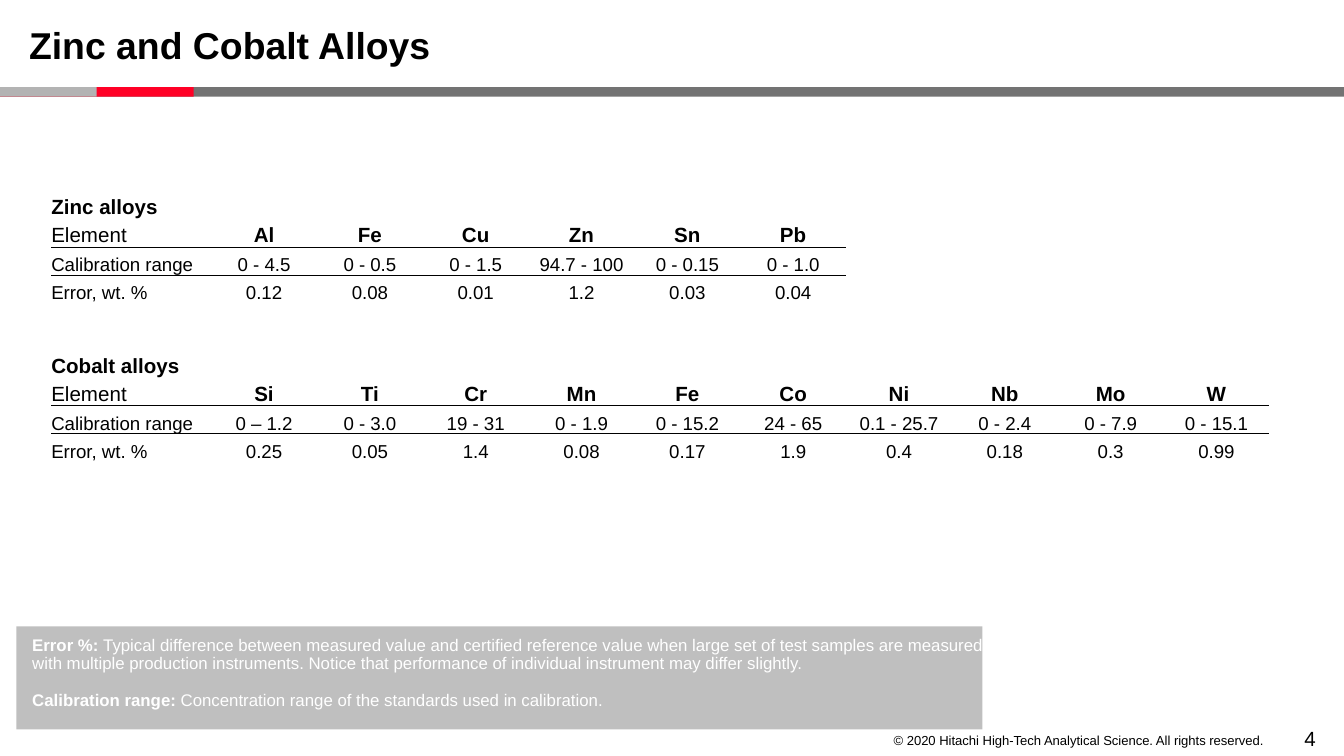
from lxml.etree import SubElement
from pptx import Presentation
from pptx.dml.color import RGBColor
from pptx.enum.shapes import MSO_SHAPE
from pptx.enum.text import MSO_ANCHOR, PP_ALIGN
from pptx.oxml.ns import qn
from pptx.util import Cm, Pt

COLORS = {"black": "000000", "white": "FFFFFF", "dark": "737373",
          "red": "FF0026", "light": "B3B3B3", "panel": "BFBFBF"}

TABLES = [
    (3.61, "Zinc alloys", [
        ("Element", "Al", "Fe", "Cu", "Zn", "Sn", "Pb"),
        ("Calibration range", "0 - 4.5", "0 - 0.5", "0 - 1.5",
         "94.7 - 100", "0 - 0.15", "0 - 1.0"),
        ("Error, wt. %", "0.12", "0.08", "0.01", "1.2", "0.03", "0.04"),
    ]),
    (6.61, "Cobalt alloys", [
        ("Element", "Si", "Ti", "Cr", "Mn", "Fe", "Co", "Ni", "Nb", "Mo", "W"),
        ("Calibration range", "0 – 1.2", "0 - 3.0", "19 - 31", "0 - 1.9",
         "0 - 15.2", "24 - 65", "0.1 - 25.7", "0 - 2.4", "0 - 7.9", "0 - 15.1"),
        ("Error, wt. %", "0.25", "0.05", "1.4", "0.08", "0.17", "1.9",
         "0.4", "0.18", "0.3", "0.99"),
    ]),
]
NOTES = [
    ("Error %: ", "Typical difference between measured value and certified "
     "reference value when large set of test samples are measured with multiple "
     "production instruments. Notice that performance of individual instrument "
     "may differ slightly."),
    ("Calibration range:",
     " Concentration range of the standards used in calibration."),
]
BARS = [("dark", 25.4), ("red", 3.66), ("light", 1.83)]
LABELS = [
    ("Zinc and Cobalt Alloys", (0.3, 0.38, 20.8, 1.02), 20, True, PP_ALIGN.LEFT),
    ("© 2020 Hitachi High-Tech Analytical Science. All rights reserved.",
     (16.48, 13.74, 7.65, 0.53), 7, False, PP_ALIGN.RIGHT),
    ("4", (23.77, 13.67, 1.35, 0.64), 11, False, PP_ALIGN.RIGHT),
]
TABLE_LEFT, LABEL_WIDTH, VALUE_WIDTH, ROW_HEIGHT = 0.97, 3.02, 2.0, 0.53
PLAIN_TABLE = "{2D5ABB26-0587-4C30-8999-92F81FD0307C}"


def set_all(target, values):
    for name, value in values.items():
        setattr(target, name, value)


def write(paragraph, runs, size, color="black", alignment=PP_ALIGN.LEFT):
    set_all(paragraph, {"alignment": alignment, "line_spacing": 0.9})
    for text, bold in runs:
        run = paragraph.add_run()
        run.text = text
        set_all(run.font, {"name": "Arial", "size": Pt(size), "bold": bold})
        run.font.color.rgb = RGBColor.from_string(COLORS[color])


def add_rectangle(slide, box, color):
    shape = slide.shapes.add_shape(MSO_SHAPE.RECTANGLE, *map(Cm, box))
    shape.shadow.inherit = False
    shape.fill.solid()
    shape.fill.fore_color.rgb = RGBColor.from_string(COLORS[color])
    shape.line.fill.background()
    return shape


def add_label(slide, text, box, size, bold, alignment):
    frame = slide.shapes.add_textbox(*map(Cm, box)).text_frame
    set_all(frame, {"word_wrap": True, "vertical_anchor": MSO_ANCHOR.MIDDLE,
                    "margin_top": 0, "margin_bottom": 0})
    write(frame.paragraphs[0], [(text, bold)], size, alignment=alignment)


def add_border(cell, side):
    line = SubElement(cell._tc.get_or_add_tcPr(), qn(side), w=str(Pt(0.5)))
    fill = SubElement(line, qn("a:solidFill"))
    SubElement(fill, qn("a:srgbClr"), val=COLORS["black"])


def add_alloy_table(slide, top, heading, body):
    rows = [(heading,) + ("",) * (len(body[0]) - 1)] + body
    widths = [LABEL_WIDTH] + [VALUE_WIDTH] * (len(body[0]) - 1)
    box = (TABLE_LEFT, top, sum(widths), ROW_HEIGHT * len(rows))
    table = slide.shapes.add_table(len(rows), len(widths), *map(Cm, box)).table
    set_all(table, {"first_row": False, "horz_banding": False})
    table._tbl.tblPr.find(qn("a:tableStyleId")).text = PLAIN_TABLE
    for column, width in zip(table.columns, widths):
        column.width = Cm(width)
    table.cell(0, 0).merge(table.cell(0, len(widths) - 1))
    for row, values in enumerate(rows):
        for column, value in enumerate(values):
            cell = table.cell(row, column)
            set_all(cell, {"margin_left": 0, "margin_right": 0, "margin_top": 0,
                           "margin_bottom": 0, "vertical_anchor": MSO_ANCHOR.BOTTOM})
            if row in (1, 2):
                add_border(cell, "a:lnB" if row == 1 else "a:lnT")
            cell.fill.background()
            if value:
                bold = row == 0 or (row == 1 and column > 0)
                write(cell.text_frame.paragraphs[0], [(value, bold)],
                      11 if row < 2 else 10,
                      alignment=PP_ALIGN.CENTER if column else PP_ALIGN.LEFT)


def add_notes_panel(slide):
    frame = add_rectangle(slide, (0.31, 11.84, 18.26, 1.95), "panel").text_frame
    set_all(frame, {"word_wrap": True, "vertical_anchor": MSO_ANCHOR.TOP,
                    "margin_left": Cm(0.3), "margin_top": Cm(0.2),
                    "margin_right": 0, "margin_bottom": 0})
    for index, (term, meaning) in enumerate(NOTES):
        paragraph = frame.add_paragraph() if index else frame.paragraphs[0]
        if index:
            paragraph.space_before = Pt(10)
        write(paragraph, [(term, True), (meaning, False)], 9, "white")


def main():
    presentation = Presentation()
    set_all(presentation, {"slide_width": Cm(25.4), "slide_height": Cm(14.29)})
    slide = presentation.slides.add_slide(presentation.slide_layouts[6])
    for color, width in BARS:
        add_rectangle(slide, (0, 1.65, width, 0.18), color)
    for label in LABELS:
        add_label(slide, *label)
    for alloy_table in TABLES:
        add_alloy_table(slide, *alloy_table)
    add_notes_panel(slide)
    presentation.save("out.pptx")


if __name__ == "__main__":
    main()
